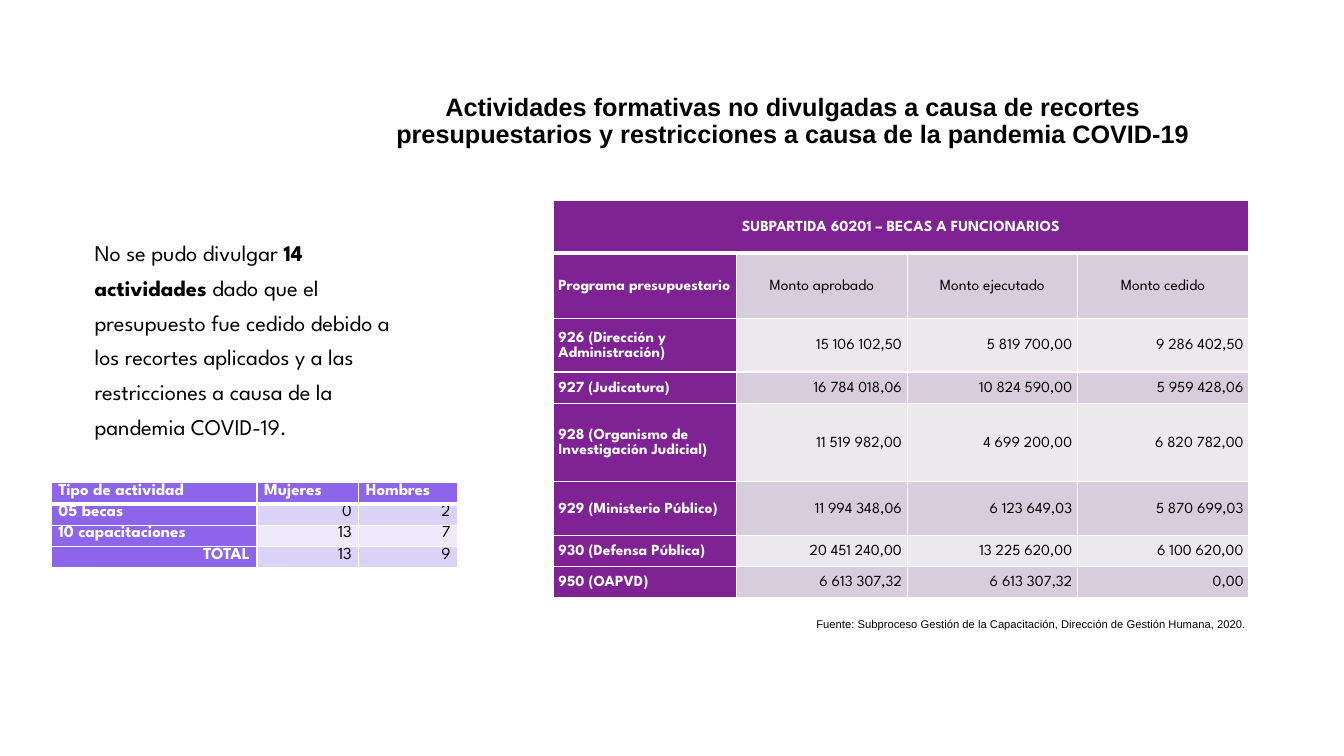
from dataclasses import dataclass

from lxml import etree
from pptx import Presentation
from pptx import util as u
from pptx.dml.color import RGBColor
from pptx.enum import text as t
from pptx.oxml import ns

GRID_COLUMNS, GRID_ROWS = 160, 90
WHITE, BLACK = "FFFFFF", "000000"
SPARTAN, ARIAL = "League Spartan", "Arial"
LEFT, CENTER = t.PP_ALIGN.LEFT, t.PP_ALIGN.CENTER
RIGHT, JUSTIFY = t.PP_ALIGN.RIGHT, t.PP_ALIGN.JUSTIFY

deck = Presentation()
deck.slide_width, deck.slide_height = u.Inches(13.33), u.Inches(7.5)
slide = deck.slides.add_slide(deck.slide_layouts[6])


@dataclass
class Place:
    column: float
    row: float
    columns: float
    rows: float


@dataclass
class Passage:
    place: Place
    runs: list[tuple[str, bool]]
    font: str
    size: float
    align: t.PP_ALIGN
    fit: t.MSO_AUTO_SIZE
    spacing: float = 1.0
    margin: float = 0
    indent: float = 0


@dataclass
class Grid:
    column: float
    row: float
    widths: list[float]
    heights: list[float]
    cells: list[list[str]]
    accent: str
    bands: tuple[str, str]
    size: float
    side_inset: float
    anchor: t.MSO_ANCHOR
    spacing: float
    label_align: t.PP_ALIGN
    merged_title: bool


def across(columns: float) -> int:
    return round(deck.slide_width * columns / GRID_COLUMNS)


def down(rows: float) -> int:
    return round(deck.slide_height * rows / GRID_ROWS)


def color(value: str) -> RGBColor:
    return RGBColor.from_string(value)


def assign(target, values: dict) -> None:
    for name, value in values.items():
        setattr(target, name, value)


def style_font(font, name: str, size: float, ink: str, bold: bool) -> None:
    assign(font, {"name": name, "size": u.Pt(size), "bold": bold})
    font.color.rgb = color(ink)


def add_passage(passage: Passage) -> None:
    place = passage.place
    frame = slide.shapes.add_textbox(
        across(place.column), down(place.row),
        across(place.columns), down(place.rows)).text_frame
    assign(frame, {"word_wrap": True, "auto_size": passage.fit})
    paragraph = frame.paragraphs[0]
    assign(paragraph, {"alignment": passage.align, "line_spacing": passage.spacing})
    properties = paragraph._p.get_or_add_pPr()
    properties.set("marL", str(u.Inches(passage.margin)))
    properties.set("indent", str(u.Inches(passage.indent)))
    for words, bold in passage.runs:
        run = paragraph.add_run()
        run.text = words
        style_font(run.font, passage.font, passage.size, BLACK, bold)


def add_borders(cell, widths: dict[str, float]) -> None:
    """Draw white lines on the sides L, R, T and B, in points."""
    properties = cell._tc.get_or_add_tcPr()
    for side, width in widths.items():
        line = etree.SubElement(properties, ns.qn(f"a:ln{side}"), w=str(u.Pt(width)))
        fill = etree.SubElement(line, ns.qn("a:solidFill"))
        etree.SubElement(fill, ns.qn("a:srgbClr"), val=WHITE)


def cell_align(grid: Grid, row: int, column: int) -> t.PP_ALIGN:
    if grid.merged_title and (row == 0 or row == 1 and column > 0):
        return CENTER
    if grid.cells[row][column] == "TOTAL":
        return RIGHT
    return grid.label_align if row == 0 or column == 0 else RIGHT


def add_grid(grid: Grid) -> None:
    table = slide.shapes.add_table(
        len(grid.heights), len(grid.widths), across(grid.column), down(grid.row),
        across(sum(grid.widths)), down(sum(grid.heights))).table
    for column, width in zip(table.columns, grid.widths):
        column.width = across(width)
    for row, height in zip(table.rows, grid.heights):
        row.height = down(height)
    if grid.merged_title:
        table.cell(0, 0).merge(table.cell(0, len(grid.widths) - 1))
    for r in range(len(grid.heights)):
        for c in range(len(grid.widths)):
            cell = table.cell(r, c)
            label = r == 0 or c == 0
            add_borders(cell, {"L": 1, "R": 1, "T": 3 if r == 1 else 1,
                               "B": 3 if r == 0 else 1})
            cell.fill.solid()
            cell.fill.fore_color.rgb = color(
                grid.accent if label else grid.bands[(r - 1) % 2])
            assign(cell, {"margin_left": u.Inches(grid.side_inset),
                          "margin_right": u.Inches(grid.side_inset),
                          "margin_top": u.Inches(0.01), "margin_bottom": 0,
                          "vertical_anchor": grid.anchor})
            paragraph = cell.text_frame.paragraphs[0]
            if c < len(grid.cells[r]):
                assign(paragraph, {"alignment": cell_align(grid, r, c),
                                   "line_spacing": grid.spacing})
                run = paragraph.add_run()
                run.text = grid.cells[r][c]
                style_font(run.font, SPARTAN, grid.size, WHITE if label else BLACK, label)


PASSAGES = [
    Passage(Place(10.08, 26.88, 39.36, 29.52),
            [("No se pudo divulgar ", False), ("14 actividades", True),
             (" dado que el presupuesto fue cedido debido a los recortes aplicados "
              "y a las restricciones a causa de la pandemia COVID-19.", False)],
            SPARTAN, 16, LEFT, t.MSO_AUTO_SIZE.SHAPE_TO_FIT_TEXT, spacing=1.3),
    Passage(Place(84.24, 72.96, 80.04, 2.88),
            [("Fuente: Subproceso Gestión de la Capacitación, "
              "Dirección de Gestión Humana, 2020.", False)],
            ARIAL, 8, LEFT, t.MSO_AUTO_SIZE.SHAPE_TO_FIT_TEXT, margin=0.49, indent=0.49),
    Passage(Place(33.12, 10.68, 110.52, 15.12),
            [("Actividades formativas no divulgadas a causa de recortes presupuestarios "
              "y restricciones a causa de la pandemia COVID-19", True)],
            ARIAL, 18, CENTER, t.MSO_AUTO_SIZE.NONE, spacing=0.9, margin=1),
]

GRIDS = [
    Grid(6.12, 57.48, [24.48, 12.12, 11.76], [2.52] * 4,
         [["Tipo de actividad", "Mujeres", "Hombres"],
          ["05 becas", "0", "2"],
          ["10 capacitaciones", "13", "7"],
          ["TOTAL", "13", "9"]],
         "8D65EA", ("DBD3F7", "EEEAFB"), 12, 0.07,
         t.MSO_ANCHOR.TOP, 1.0, JUSTIFY, False),
    Grid(65.88, 23.88, [21.84, 20.28, 20.28, 20.4],
         [6.24, 7.8, 6.36, 3.72, 9.36, 6.36, 3.72, 3.72],
         [["SUBPARTIDA 60201 – BECAS A FUNCIONARIOS"],
          ["Programa presupuestario", "Monto aprobado", "Monto ejecutado", "Monto cedido"],
          ["926 (Dirección y Administración)", "15 106 102,50", "5 819 700,00", "9 286 402,50"],
          ["927 (Judicatura)", "16 784 018,06", "10 824 590,00", "5 959 428,06"],
          ["928 (Organismo de Investigación Judicial)",
           "11 519 982,00", "4 699 200,00", "6 820 782,00"],
          ["929 (Ministerio Público)", "11 994 348,06", "6 123 649,03", "5 870 699,03"],
          ["930 (Defensa Pública)", "20 451 240,00", "13 225 620,00", "6 100 620,00"],
          ["950 (OAPVD)", "6 613 307,32", "6 613 307,32", "0,00"]],
         "7F2294", ("D8CDDC", "ECE8EE"), 11, 0.05,
         t.MSO_ANCHOR.MIDDLE, 1.05, LEFT, True),
]

for passage in PASSAGES:
    add_passage(passage)
for grid in GRIDS:
    add_grid(grid)
deck.save("out.pptx")
